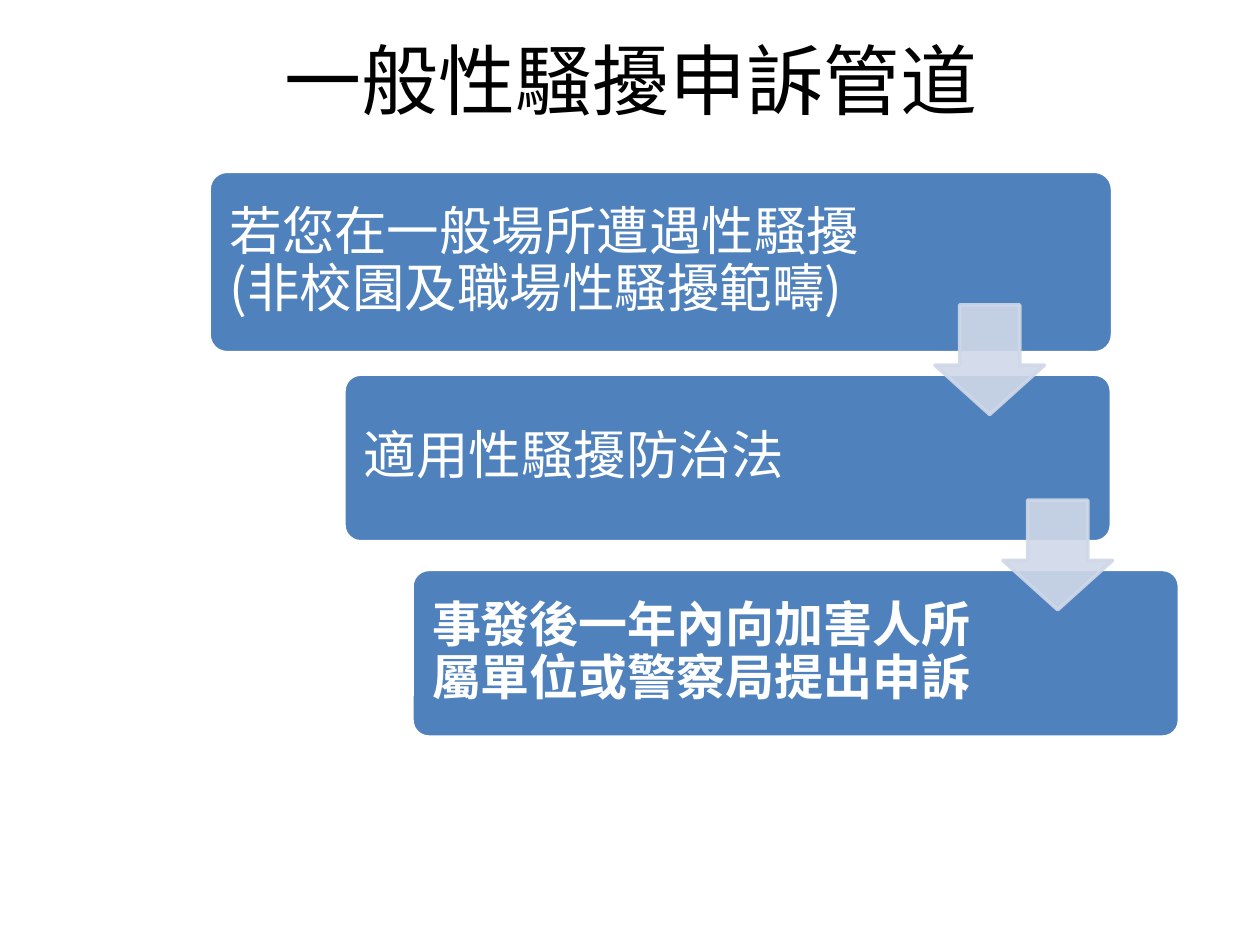
from lxml import etree
from pptx import Presentation
from pptx.dml.color import RGBColor
from pptx.enum.shapes import MSO_SHAPE as Shape
from pptx.enum.text import MSO_ANCHOR as Anchor, PP_ALIGN as Align
from pptx.oxml.ns import qn
from pptx.util import Inches, Pt

FONT = "Noto Sans CJK SC"
BLACK = RGBColor(0x00, 0x00, 0x00)
WHITE = RGBColor(0xFF, 0xFF, 0xFF)
BLUE = RGBColor(0x4F, 0x81, 0xBD)
PALE = RGBColor(0xD0, 0xD8, 0xE8)


def write(box, text, align, color, **font_format):
    """Put one vertically centred paragraph in the box, in the slide's font."""
    frame = box.text_frame
    frame.word_wrap = True
    frame.vertical_anchor = Anchor.MIDDLE
    para = frame.paragraphs[0]
    para.alignment = align
    span = para.add_run()
    span.text = text
    span.font.color.rgb = color
    for name, value in {"name": FONT, **font_format}.items():
        setattr(span.font, name, value)
    east_asian = etree.SubElement(span.font._element, qn("a:ea"))
    east_asian.set("typeface", FONT)
    return para


def add_filled(kind, left, top, width, height, fill, line, adjustments):
    shape = page.shapes.add_shape(
        kind, Inches(left), Inches(top), Inches(width), Inches(height))
    shape.shadow.inherit = False
    shape.fill.solid()
    shape.fill.fore_color.rgb = fill
    shape.line.color.rgb = line
    shape.line.width = Pt(2)
    for index, value in enumerate(adjustments):
        shape.adjustments[index] = value
    return shape


deck = Presentation()
deck.slide_width, deck.slide_height = Inches(10), Inches(7.5)
page = deck.slides.add_slide(deck.slide_layouts[5])

title = page.shapes.title
title.left, title.top = Inches(0.51), Inches(0)
title.width, title.height = Inches(9), Inches(1.25)
write(title, "一般性騷擾申訴管道", Align.CENTER, BLACK, size=Pt(44))

# left, top, width, height, space kept free for the arrow, text, size, bold
steps = [
    (1.66, 1.36, 7.17, 1.44, 1.73, "若您在一般場所遭遇性騷擾(非校園及職場性騷擾範疇)", 30, False),
    (2.73, 2.97, 6.09, 1.33, 1.52, "適用性騷擾防治法", 30, False),
    (3.27, 4.52, 6.09, 1.33, 1.52, "事發後一年內向加害人所屬單位或警察局提出申訴", 28, True),
]
for left, top, width, height, free, text, size, bold in steps:
    step = add_filled(Shape.ROUNDED_RECTANGLE, left, top, width, height,
                      BLUE, WHITE, [0.1])
    margins = {"margin_left": 0.12, "margin_right": free,
               "margin_top": 0.12, "margin_bottom": 0.12}
    for name, value in margins.items():
        setattr(step.text_frame, name, Inches(value))
    para = write(step, text, Align.LEFT, WHITE, size=Pt(size), bold=bold)
    para.line_spacing = 0.9

for left, top in [(7.42, 2.42), (7.96, 3.97)]:
    arrow = add_filled(Shape.DOWN_ARROW, left, top, 0.87, 0.87,
                       PALE, PALE, [0.55, 0.45])
    # python-pptx has no transparency setting, so fill and line get an alpha
    for color in arrow._element.spPr.iter(qn("a:srgbClr")):
        etree.SubElement(color, qn("a:alpha")).set("val", "90000")

deck.save("out.pptx")
